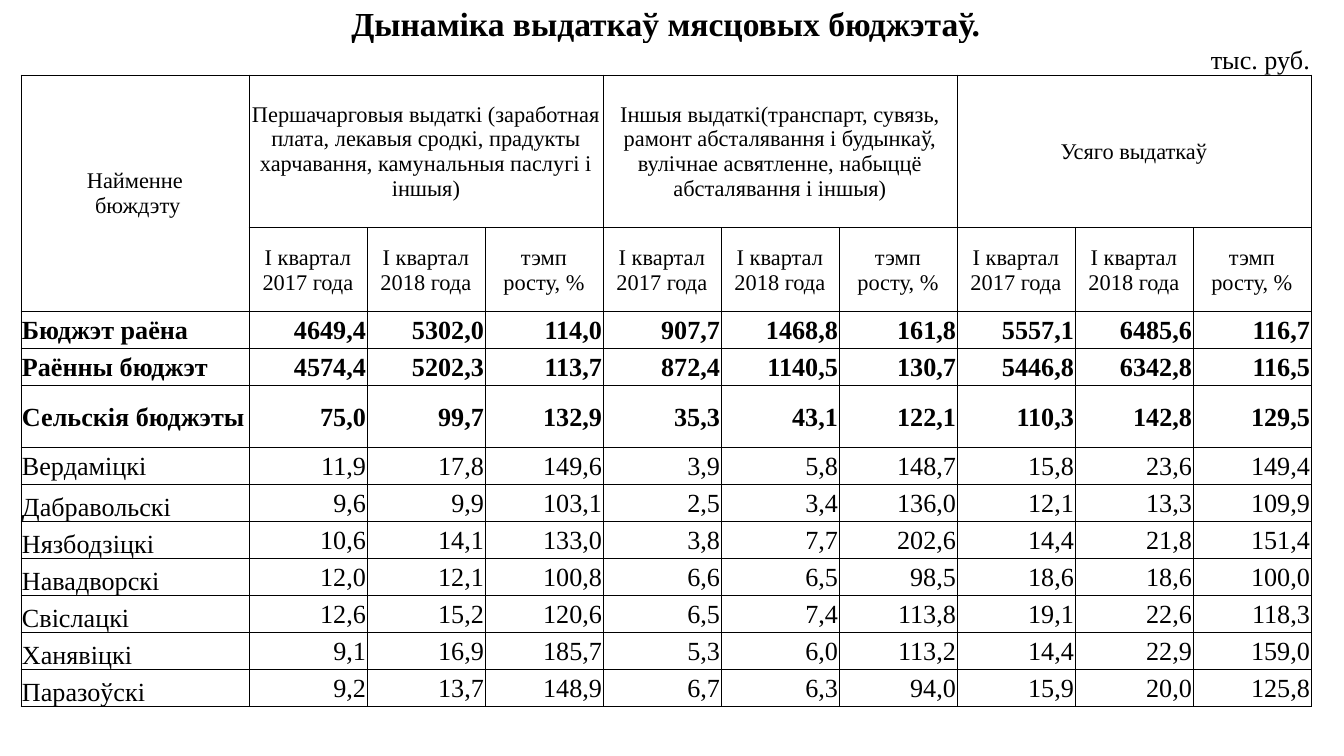
from lxml.etree import SubElement
from pptx import Presentation
from pptx.dml.color import RGBColor
from pptx.enum.text import MSO_ANCHOR as Anchor, PP_ALIGN as Align
from pptx.oxml.ns import qn
from pptx.util import Pt

TITLE = "Дынаміка выдаткаў мясцовых бюджэтаў."
UNIT = "тыс. руб."
NAME_HEADING = "Найменне\n бюждэту"
GROUPS = [
    "Першачарговыя выдаткі (заработная плата, лекавыя сродкі, прадукты харчавання, камунальныя паслугі і іншыя)",
    "Іншыя выдаткі(транспарт, сувязь, рамонт абсталявання і будынкаў, вулічнае асвятленне, набыццё абсталявання і іншыя)",
    "Усяго выдаткаў",
]
MEASURES = ["I квартал\n2017 года", "I квартал\n2018 года", "тэмп\nросту, %"]
BUDGETS = [
    ("Бюджэт раёна", "4649,4 5302,0 114,0 907,7 1468,8 161,8 5557,1 6485,6 116,7"),
    ("Раённы бюджэт", "4574,4 5202,3 113,7 872,4 1140,5 130,7 5446,8 6342,8 116,5"),
    ("Сельскія бюджэты", "75,0 99,7 132,9 35,3 43,1 122,1 110,3 142,8 129,5"),
    ("Вердаміцкі", "11,9 17,8 149,6 3,9 5,8 148,7 15,8 23,6 149,4"),
    ("Дабравольскі", "9,6 9,9 103,1 2,5 3,4 136,0 12,1 13,3 109,9"),
    ("Нязбодзіцкі", "10,6 14,1 133,0 3,8 7,7 202,6 14,4 21,8 151,4"),
    ("Навадворскі", "12,0 12,1 100,8 6,6 6,5 98,5 18,6 18,6 100,0"),
    ("Свіслацкі", "12,6 15,2 120,6 6,5 7,4 113,8 19,1 22,6 118,3"),
    ("Ханявіцкі", "9,1 16,9 185,7 5,3 6,0 113,2 14,4 22,9 159,0"),
    ("Паразоўскі", "9,2 13,7 148,9 6,7 6,3 94,0 15,9 20,0 125,8"),
]
TOTAL_COUNT = 3
MIDDLE_NAMES = 4

FONT = "Times New Roman"
BLACK = RGBColor(0, 0, 0)
SCALE = 914400 / 134.4
SLIDE_SIZE = (1344, 756)
TABLE_LEFT, TABLE_TOP = 21, 4
COLUMNS = [228] + [118] * 9
ROWS = [40, 31, 153, 84, 37, 37, 62] + [37] * 7
GRID_TOP, DATA_TOP = 2, 4
MERGES = [(0, 0, 0, 9), (1, 1, 1, 2), (1, 3, 1, 4), (1, 5, 1, 6), (2, 0, 3, 0),
          (2, 1, 2, 3), (2, 4, 2, 6), (2, 7, 2, 9)]


def px(length):
    return round(length * SCALE)


def draw_borders(cell, sides):
    props = cell._tc.get_or_add_tcPr()
    for side in sides:
        line = SubElement(props, qn(f"a:ln{side}"), w=str(Pt(0.5)))
        fill = SubElement(line, qn("a:solidFill"))
        SubElement(fill, qn("a:srgbClr"), val=str(BLACK))


def write(cell, text, size, align, anchor=Anchor.MIDDLE, bold=False):
    cell.text_frame.text = text
    cell.vertical_anchor = anchor
    for para in cell.text_frame.paragraphs:
        para.alignment = align
        for span in para.runs:
            span.font.name, span.font.size = FONT, Pt(size)
            span.font.bold, span.font.color.rgb = bold, BLACK


def prepare_grid(table):
    for column, width in zip(table.columns, COLUMNS):
        column.width = px(width)
    for index, (row, height) in enumerate(zip(table.rows, ROWS)):
        row.height = px(height)
        for cell in row.cells:
            cell.margin_left = cell.margin_right = cell.margin_top = px(1)
            cell.margin_bottom = 0
            draw_borders(cell, "LRTB" if index >= GRID_TOP else "B" * index)
            cell.fill.background()
            if index < DATA_TOP:
                para = cell.text_frame.paragraphs[0]
                SubElement(para._p, qn("a:endParaRPr"), sz="1200")
    for top, left, bottom, right in MERGES:
        table.cell(top, left).merge(table.cell(bottom, right))


def fill_table(table):
    write(table.cell(0, 0), TITLE, 18, Align.CENTER, Anchor.BOTTOM, True)
    write(table.cell(1, 9), UNIT, 14, Align.RIGHT, Anchor.BOTTOM)
    write(table.cell(2, 0), NAME_HEADING, 12, Align.CENTER)
    for group, heading in enumerate(GROUPS):
        first = 1 + group * len(MEASURES)
        write(table.cell(2, first), heading, 12, Align.CENTER)
        for offset, measure in enumerate(MEASURES):
            write(table.cell(3, first + offset), measure, 12, Align.CENTER)
    for index, (name, values) in enumerate(BUDGETS):
        row, bold = DATA_TOP + index, index < TOTAL_COUNT
        anchor = Anchor.MIDDLE if index < MIDDLE_NAMES else Anchor.BOTTOM
        write(table.cell(row, 0), name, 14, Align.LEFT, anchor, bold)
        for column, value in enumerate(values.split(), 1):
            write(table.cell(row, column), value, 14, Align.RIGHT, bold=bold)


def main():
    """Build the slide with the table of local budget spending."""
    deck = Presentation()
    deck.slide_width, deck.slide_height = map(px, SLIDE_SIZE)
    page = deck.slides.add_slide(deck.slide_layouts[6])
    frame = page.shapes.add_table(len(ROWS), len(COLUMNS), px(TABLE_LEFT), px(TABLE_TOP),
                                  px(sum(COLUMNS)), px(sum(ROWS)))
    table = frame.table
    table.first_row = table.horz_banding = False
    prepare_grid(table)
    fill_table(table)
    deck.save("out.pptx")


if __name__ == "__main__":
    main()
